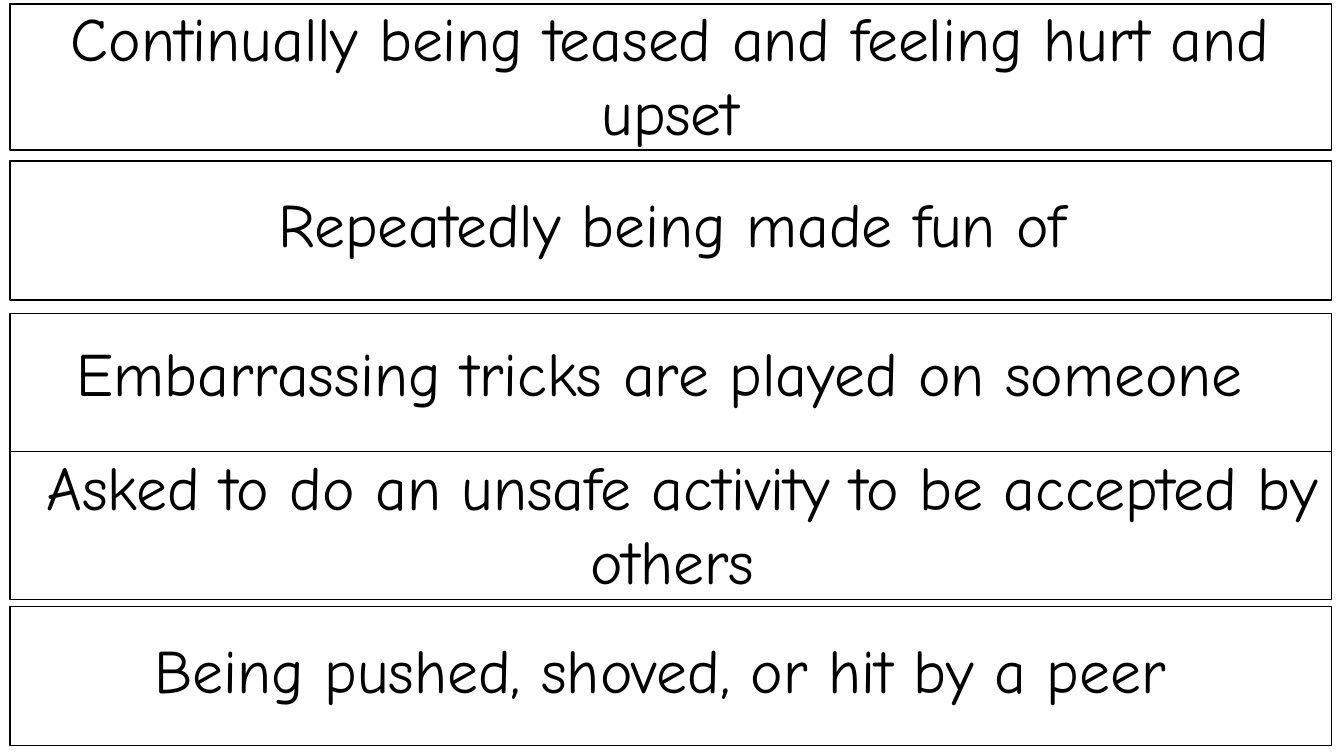
"""Build a slide of five bordered strips describing bullying situations."""
from pptx import Presentation
from pptx.dml.color import RGBColor
from pptx.enum.shapes import MSO_SHAPE
from pptx.enum.text import MSO_AUTO_SIZE, PP_ALIGN
from pptx.util import Cm, Pt

RECTANGLE = MSO_SHAPE.RECTANGLE
CENTER = PP_ALIGN.CENTER
GROW = MSO_AUTO_SIZE.SHAPE_TO_FIT_TEXT

COLORS = {"paper": "FFFFFF", "ink": "000000"}
FONT = "Comic Neue"
BLANK_LAYOUT = 6
LEFT, SHIFTED_LEFT, WIDTH = 0.25, 0.56, 33.3
ONE_LINE, TWO_LINES = 2.13, 4.01

# Strip top and height, then caption left, top, height and wording
STRIPS = [
    (0.1, 3.68, LEFT, -0.13, TWO_LINES,
     "Continually being teased and feeling hurt and upset"),
    (4.06, 3.5, SHIFTED_LEFT, 4.55, ONE_LINE,
     "Repeatedly being made fun of "),
    (7.9, 3.5, LEFT, 8.31, ONE_LINE,
     "Embarrassing tricks are played on someone "),
    (11.38, 3.73, SHIFTED_LEFT, 11.18, TWO_LINES,
     "Asked to do an unsafe activity to be accepted by others "),
    (15.29, 3.5, LEFT, 15.8, ONE_LINE,
     "Being pushed, shoved, or hit by a peer "),
]


def color(name):
    """Return the named colour."""
    return RGBColor.from_string(COLORS[name])


def add_strip(slide, top, height):
    """Add one white strip with a thin black border."""
    shape = slide.shapes.add_shape(RECTANGLE, Cm(LEFT), Cm(top), Cm(WIDTH), Cm(height))
    shape.shadow.inherit = False
    shape.fill.solid()
    shape.fill.fore_color.rgb = color("paper")
    shape.line.color.rgb = color("ink")
    shape.line.width = Pt(1)


def add_caption(slide, left, top, height, text):
    """Add one centred caption that wraps within the strip width."""
    box = slide.shapes.add_textbox(Cm(left), Cm(top), Cm(WIDTH), Cm(height))
    frame = box.text_frame
    frame.word_wrap = True
    frame.auto_size = GROW
    paragraph = frame.paragraphs[0]
    paragraph.text = text
    paragraph.alignment = CENTER
    paragraph.font.name = FONT
    paragraph.font.size = Pt(44)
    paragraph.font.color.rgb = color("ink")


def main():
    """Build and save the presentation."""
    presentation = Presentation()
    presentation.slide_width = Cm(33.87)
    presentation.slide_height = Cm(19.05)
    slide = presentation.slides.add_slide(presentation.slide_layouts[BLANK_LAYOUT])
    for top, height, *_ in STRIPS:
        add_strip(slide, top, height)
    for _, _, *caption in STRIPS:
        add_caption(slide, *caption)
    presentation.save("out.pptx")


if __name__ == "__main__":
    main()
